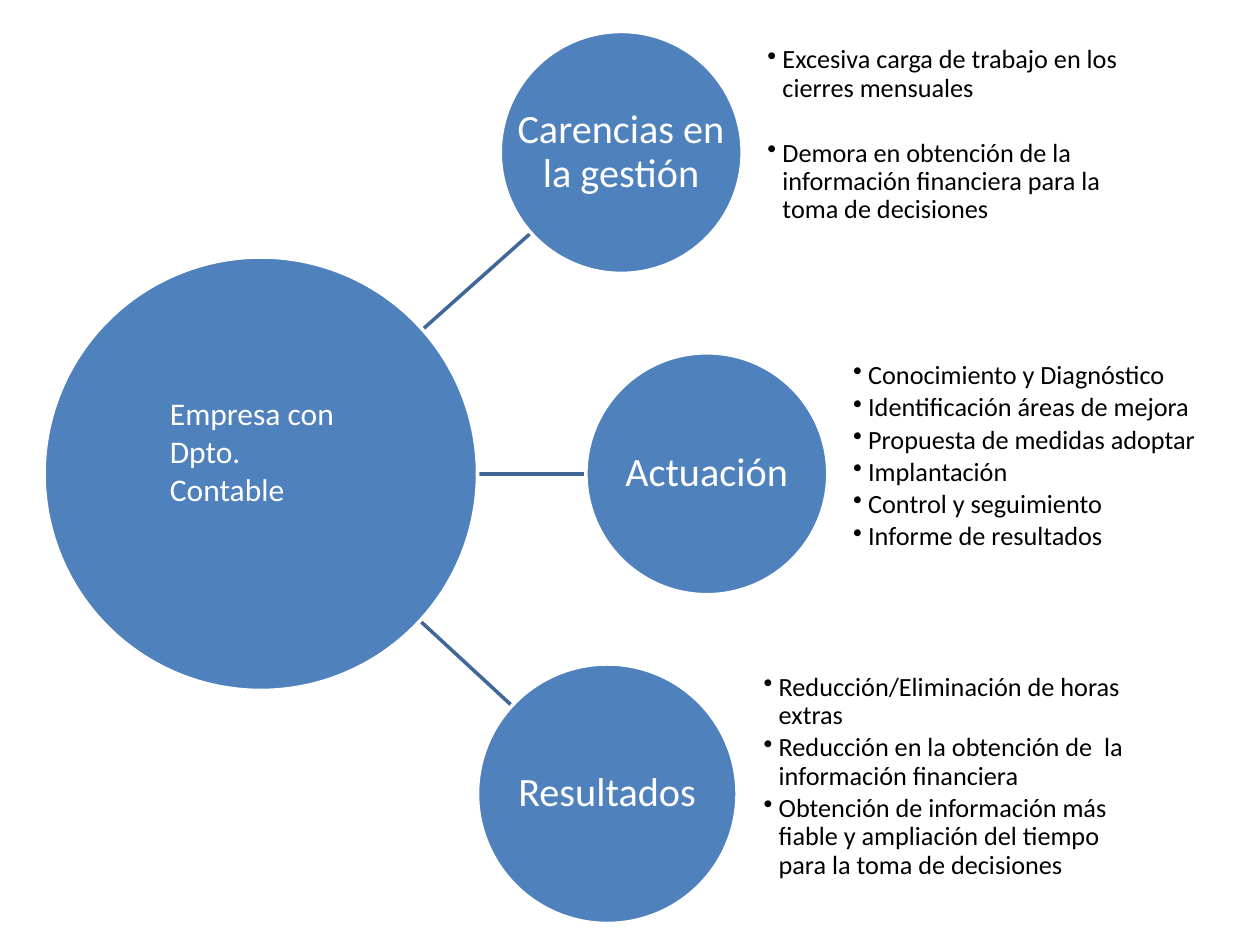
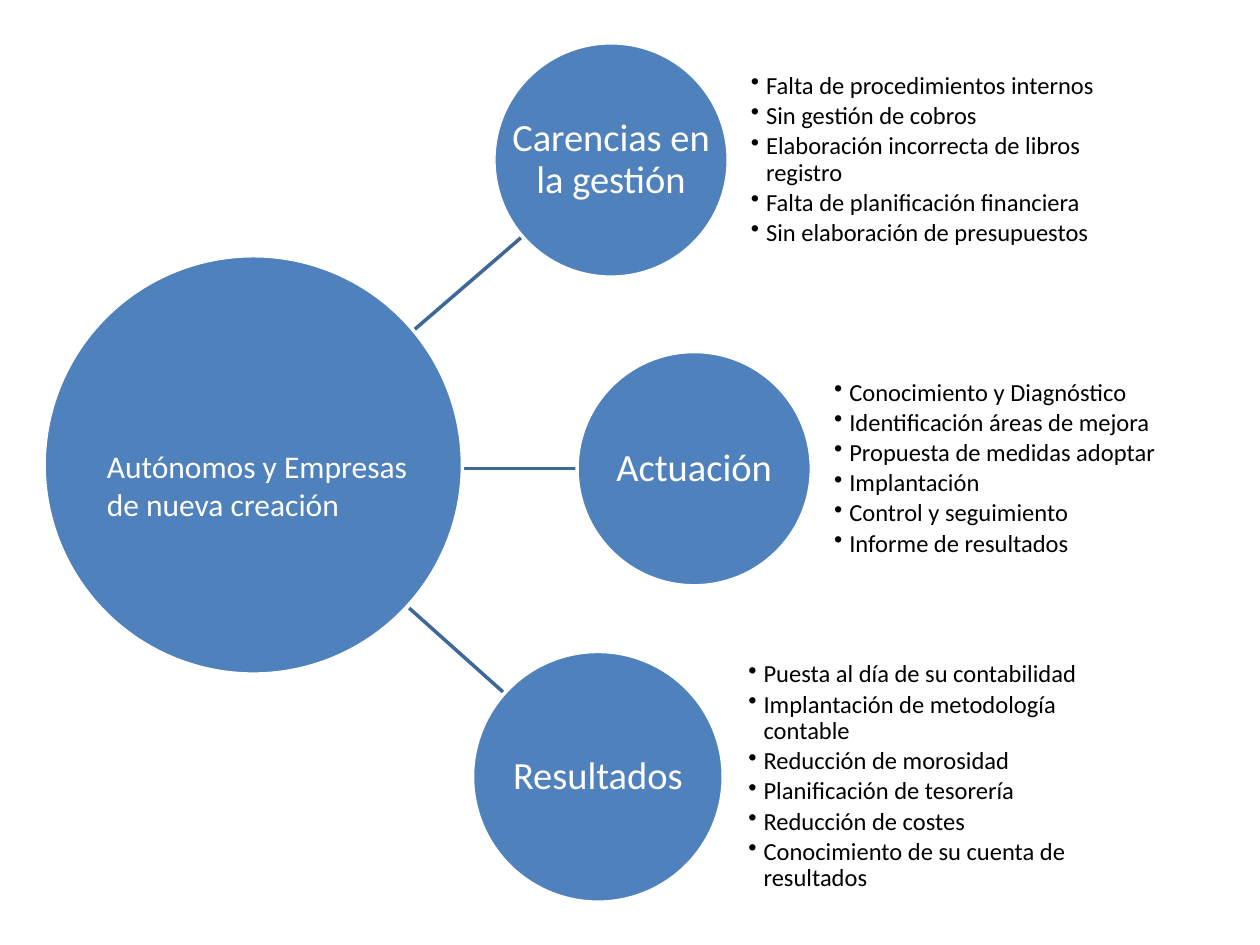
from math import hypot

from lxml import etree
from pptx import Presentation
from pptx.dml.color import RGBColor
from pptx.enum.shapes import MSO_CONNECTOR, MSO_SHAPE
from pptx.enum.text import MSO_ANCHOR, PP_ALIGN
from pptx.oxml.ns import qn
from pptx.util import Inches, Pt

OVAL, STRAIGHT = MSO_SHAPE.OVAL, MSO_CONNECTOR.STRAIGHT
LEFT, CENTER = PP_ALIGN.LEFT, PP_ALIGN.CENTER
TOP, MIDDLE = MSO_ANCHOR.TOP, MSO_ANCHOR.MIDDLE

FONT = "Calibri"
BLUE, LINE_BLUE, WHITE, BLACK = "4F81BD", "3F6797", "FFFFFF", "000000"
INDENT = 0.12       # hanging indent of the bullets
HUB_SIZE = 18
BOX_RATIO = 1.5     # width of a bullet box in circle diameters

# Content: circles are (left, top, diameter), boxes (left, top, width, height)
ACTIONS = ["Conocimiento y Diagnóstico", "Identificación áreas de mejora",
           "Propuesta de medidas adoptar", "Implantación",
           "Control y seguimiento", "Informe de resultados"]

SLIDES = [
    {
        "hub": "Empresa con Dpto. Contable",
        "hub_circle": (0.35, 2.04, 3.44),
        "hub_box": (1.25, 3.08, 1.58, 1.01),
        "label_size": 23, "bullet_size": 15, "bottom_inset": 0.27,
        "branches": [
            {"label": "Carencias en la gestión", "circle": (3.97, 0.25, 1.92),
             "box_left": 6.09, "gap": 20.9,
             "bullets": ["Excesiva carga de trabajo en los cierres mensuales",
                         "Demora en obtención de la información financiera "
                         "para la toma de decisiones"]},
            {"label": "Actuación", "circle": (4.65, 2.8, 1.92),
             "box_left": 6.77, "bullets": ACTIONS},
            {"label": "Resultados", "circle": (3.79, 5.27, 2.06),
             "box_left": 6.06,
             "bullets": ["Reducción/Eliminación de horas extras",
                         "Reducción en la obtención de  la información financiera",
                         "Obtención de información más fiable y ampliación "
                         "del tiempo para la toma de decisiones"]},
        ],
    },
    {
        "hub": "Autónomos y Empresas de nueva creación",
        "hub_circle": (0.35, 2.03, 3.32),
        "hub_box": (0.75, 3.5, 2.67, 0.71),
        "label_size": 22, "bullet_size": 14, "bottom_inset": 0,
        "branches": [
            {"label": "Carencias en la gestión", "circle": (3.92, 0.34, 1.86),
             "box_left": 5.96,
             "bullets": ["Falta de procedimientos internos",
                         "Sin gestión de cobros",
                         "Elaboración incorrecta de libros registro",
                         "Falta de planificación financiera",
                         "Sin elaboración de presupuestos"]},
            {"label": "Actuación", "circle": (4.58, 2.79, 1.86),
             "box_left": 6.62, "bullets": ACTIONS},
            {"label": "Resultados", "circle": (3.75, 5.17, 1.99),
             "box_left": 5.94,
             "bullets": ["Puesta al día de su contabilidad",
                         "Implantación de metodología contable",
                         "Reducción de morosidad",
                         "Planificación de tesorería",
                         "Reducción de costes",
                         "Conocimiento de su cuenta de resultados"]},
        ],
    },
]


def rgb(color):
    return RGBColor.from_string(color)


def add_text(s, box, lines, size, color=WHITE, align=LEFT, anchor=TOP,
             insets=None, spacing=None, after=0, last_after=0, bullet=False):
    """Text box with one paragraph per line; insets are left, top, right, bottom."""
    tf = s.shapes.add_textbox(*map(Inches, box)).text_frame
    tf.word_wrap = True
    tf.vertical_anchor = anchor
    if insets:
        (tf.margin_left, tf.margin_top,
         tf.margin_right, tf.margin_bottom) = map(Inches, insets)
    for i, line in enumerate(lines):
        p = tf.paragraphs[0] if i == 0 else tf.add_paragraph()
        p.alignment = align
        p.line_spacing = spacing
        p.space_after = Pt(last_after if i == len(lines) - 1 else after)
        r = p.add_run()
        r.text = line
        r.font.name = FONT
        r.font.size = Pt(size)
        r.font.color.rgb = rgb(color)
        if bullet:
            pPr = p._p.get_or_add_pPr()
            pPr.set("marL", str(Inches(INDENT)))
            pPr.set("indent", str(Inches(-INDENT)))
            etree.SubElement(pPr, qn("a:buChar")).set("char", "•")


def add_circle(s, left, top, diameter):
    sp = s.shapes.add_shape(OVAL, *map(Inches, (left, top, diameter, diameter)))
    sp.shadow.inherit = False
    sp.fill.solid()
    sp.fill.fore_color.rgb = rgb(BLUE)
    sp.line.color.rgb = rgb(WHITE)
    sp.line.width = Pt(2)


def add_spoke(s, hub, circle, axis_y):
    """Line from rim to rim, along the line between both centres."""
    hub_r, r = hub[2] / 2, circle[2] / 2
    x1, y1 = hub[0] + hub_r, axis_y
    x2, y2 = circle[0] + r, circle[1] + r
    length = hypot(x2 - x1, y2 - y1)
    ux, uy = (x2 - x1) / length, (y2 - y1) / length
    ends = (x1 + hub_r * ux, y1 + hub_r * uy, x2 - r * ux, y2 - r * uy)
    cx = s.shapes.add_connector(STRAIGHT, *map(Inches, ends))
    cx.line.color.rgb = rgb(LINE_BLUE)
    cx.line.width = Pt(2)
    etree.SubElement(cx._element.spPr, qn("a:effectLst"))


def add_branch(s, branch, data):
    left, top, d = branch["circle"]
    add_circle(s, left, top, d)
    add_text(s, (left, top, d, d), [branch["label"]], data["label_size"],
             align=CENTER, anchor=MIDDLE, insets=[0.02] * 4, spacing=0.9)
    size = data["bullet_size"]
    after = 0.15 * size
    add_text(s, (branch["box_left"], top, BOX_RATIO * d, d), branch["bullets"],
             size, color=BLACK, anchor=MIDDLE,
             insets=(0, 0, 0, data["bottom_inset"]), spacing=0.9,
             after=branch.get("gap", after), last_after=after, bullet=True)


def build_slide(prs, data):
    s = prs.slides.add_slide(prs.slide_layouts[6])
    hub, branches = data["hub_circle"], data["branches"]
    # Spokes lie under the circles and start on the middle circle's axis
    _, mid_top, mid_d = branches[1]["circle"]
    for branch in reversed(branches):
        add_spoke(s, hub, branch["circle"], mid_top + mid_d / 2)
    # Circles, labels and bullet lists
    add_circle(s, *hub)
    for branch in branches:
        add_branch(s, branch, data)
    add_text(s, data["hub_box"], [data["hub"]], HUB_SIZE)


def main():
    prs = Presentation()
    prs.slide_width, prs.slide_height = Inches(10), Inches(7.5)
    for data in SLIDES:
        build_slide(prs, data)
    prs.save("out.pptx")


if __name__ == "__main__":
    main()
